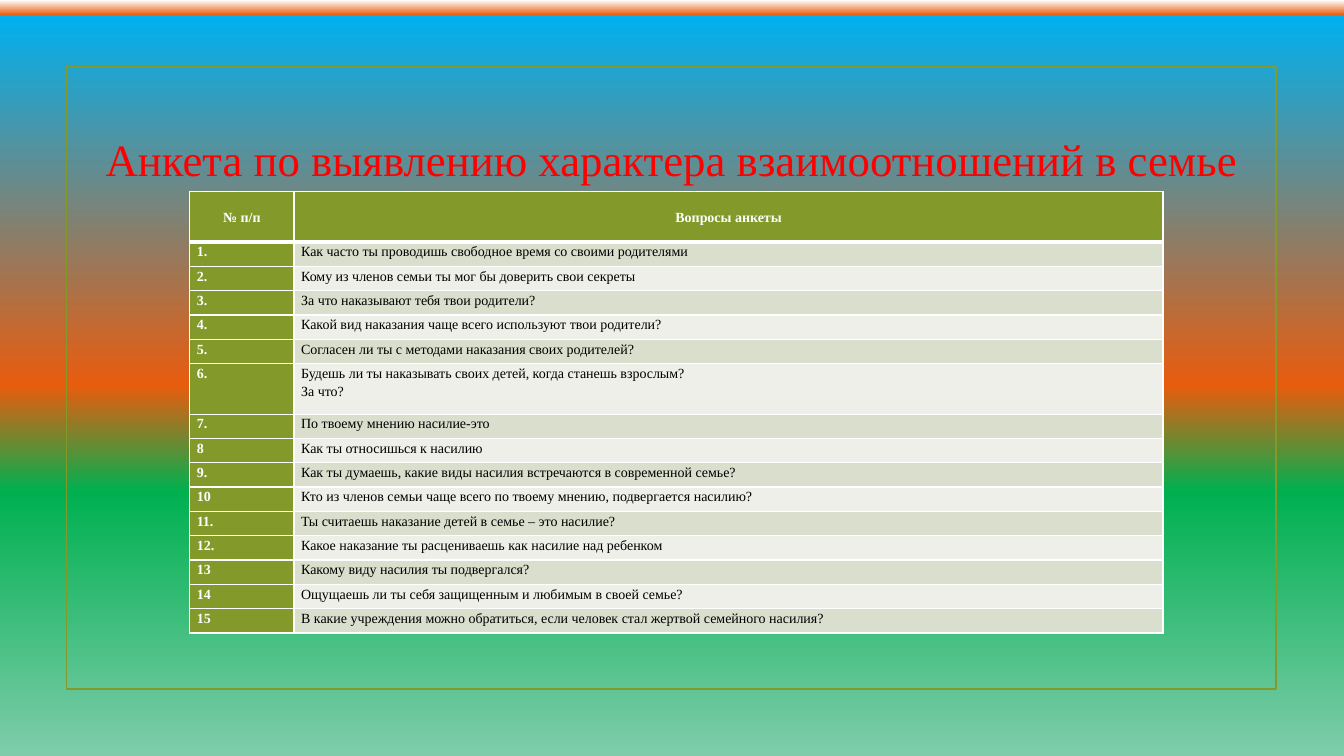
from pptx import Presentation
from pptx.dml.color import RGBColor
from pptx.enum.shapes import MSO_SHAPE
from pptx.enum.text import MSO_ANCHOR, PP_ALIGN
from pptx.oxml import parse_xml
from pptx.oxml.ns import nsdecls
from pptx.util import Cm, Pt

FONT = "Times New Roman"
OLIVE = "83992A"
BANDS = ["D9DECD", "EDEFE8"]
ROWS = [
    ("№ п/п", "Вопросы анкеты"),
    ("1.", "Как часто ты проводишь свободное время со своими родителями"),
    ("2.", "Кому из членов семьи ты мог бы доверить свои секреты"),
    ("3.", "За что наказывают тебя твои родители?"),
    ("4.", "Какой вид наказания чаще всего используют твои родители?"),
    ("5.", "Согласен ли ты с методами наказания своих родителей?"),
    ("6.", "Будешь ли ты наказывать своих детей, когда станешь взрослым?\nЗа что?"),
    ("7.", "По твоему мнению насилие-это"),
    ("8", "Как ты относишься к насилию"),
    ("9.", "Как ты думаешь, какие виды насилия встречаются в современной семье?"),
    ("10", "Кто из членов семьи чаще всего по твоему мнению, подвергается насилию?"),
    ("11.", "Ты считаешь наказание детей в семье – это насилие?"),
    ("12.", "Какое наказание ты расцениваешь как насилие над ребенком"),
    ("13", "Какому виду насилия ты подвергался?"),
    ("14", "Ощущаешь ли ты себя защищенным и любимым в своей семье?"),
    ("15", "В какие учреждения можно обратиться, если человек стал жертвой семейного насилия?"),
]
TALL_ROWS = (0, 6)


def color(hex_string):
    return RGBColor.from_string(hex_string)


def add_border(cell, side, points):
    cell._tc.get_or_add_tcPr().append(parse_xml(
        f'<a:ln{side} {nsdecls("a")} w="{Pt(points)}"><a:solidFill>'
        f'<a:srgbClr val="FFFFFF"/></a:solidFill></a:ln{side}>'))


presentation = Presentation()
presentation.slide_width = Cm(33.87)
presentation.slide_height = Cm(19.05)
slide = presentation.slides.add_slide(presentation.slide_layouts[5])

# Background gradient, running from top to bottom
background_fill = slide.background.fill
background_fill.gradient()
background_fill.gradient_angle = 270
stop_list = slide.element.xpath(".//a:gsLst")[0]
for stop in list(stop_list):
    stop_list.remove(stop)
for percent, hex_string in [(0, "FFFFFF"), (2, "E85C0E"), (2, "00B0F0"),
                            (51, "E85C0E"), (65, "00B050"), (100, "7FCCAB")]:
    stop_list.append(parse_xml(
        f'<a:gs {nsdecls("a")} pos="{percent * 1000}"><a:srgbClr val="{hex_string}"/></a:gs>'))

# Frame, behind the title
frame = slide.shapes.add_shape(MSO_SHAPE.RECTANGLE, Cm(1.68), Cm(1.69), Cm(30.48), Cm(15.67))
frame.shadow.inherit = False
frame.fill.background()
frame.line.color.rgb = color(OLIVE)
frame.line.width = Pt(1.25)
title = slide.shapes.title
title._element.addprevious(frame._element)

# Title
title.left, title.top, title.width, title.height = Cm(2.34), Cm(3.2), Cm(29.18), Cm(1.6)
title.text = "Анкета по выявлению характера взаимоотношений в семье"
title.text_frame.vertical_anchor = MSO_ANCHOR.MIDDLE
title.text_frame.margin_left = title.text_frame.margin_right = 0
paragraph = title.text_frame.paragraphs[0]
paragraph.alignment = PP_ALIGN.CENTER
paragraph.font.size = Pt(32)
paragraph.font.name = FONT
paragraph.font.color.rgb = color("FF0000")

# Question table
table_height = Cm(11.13)
tall_height = Cm(1.27)
low_height = (table_height - len(TALL_ROWS) * tall_height) // (len(ROWS) - len(TALL_ROWS))
table = slide.shapes.add_table(len(ROWS), 2, Cm(4.78), Cm(4.83), Cm(24.53), table_height).table
table.columns[0].width = Cm(2.63)
table.columns[1].width = Cm(21.9)

for row_index, texts in enumerate(ROWS):
    table.rows[row_index].height = tall_height if row_index in TALL_ROWS else low_height
    is_header = row_index == 0
    for column_index, text in enumerate(texts):
        is_accent = is_header or column_index == 0
        cell = table.cell(row_index, column_index)
        cell.text = text
        cell.margin_left = cell.margin_right = Cm(0.18)
        cell.margin_top = cell.margin_bottom = 0
        cell.vertical_anchor = MSO_ANCHOR.MIDDLE if is_header else MSO_ANCHOR.TOP
        add_border(cell, "L", 1)
        add_border(cell, "R", 1)
        add_border(cell, "T", 3 if row_index == 1 else 1)
        add_border(cell, "B", 3 if is_header else 1)
        cell.fill.solid()
        cell.fill.fore_color.rgb = color(OLIVE if is_accent else BANDS[(row_index - 1) % 2])
        for paragraph in cell.text_frame.paragraphs:
            paragraph.alignment = PP_ALIGN.CENTER if is_header else PP_ALIGN.LEFT
            paragraph.line_spacing = 1.15
            paragraph.font.size = Pt(10)
            paragraph.font.name = FONT
            paragraph.font.bold = is_accent
            paragraph.font.color.rgb = color("FFFFFF" if is_accent else "000000")

presentation.save("out.pptx")
